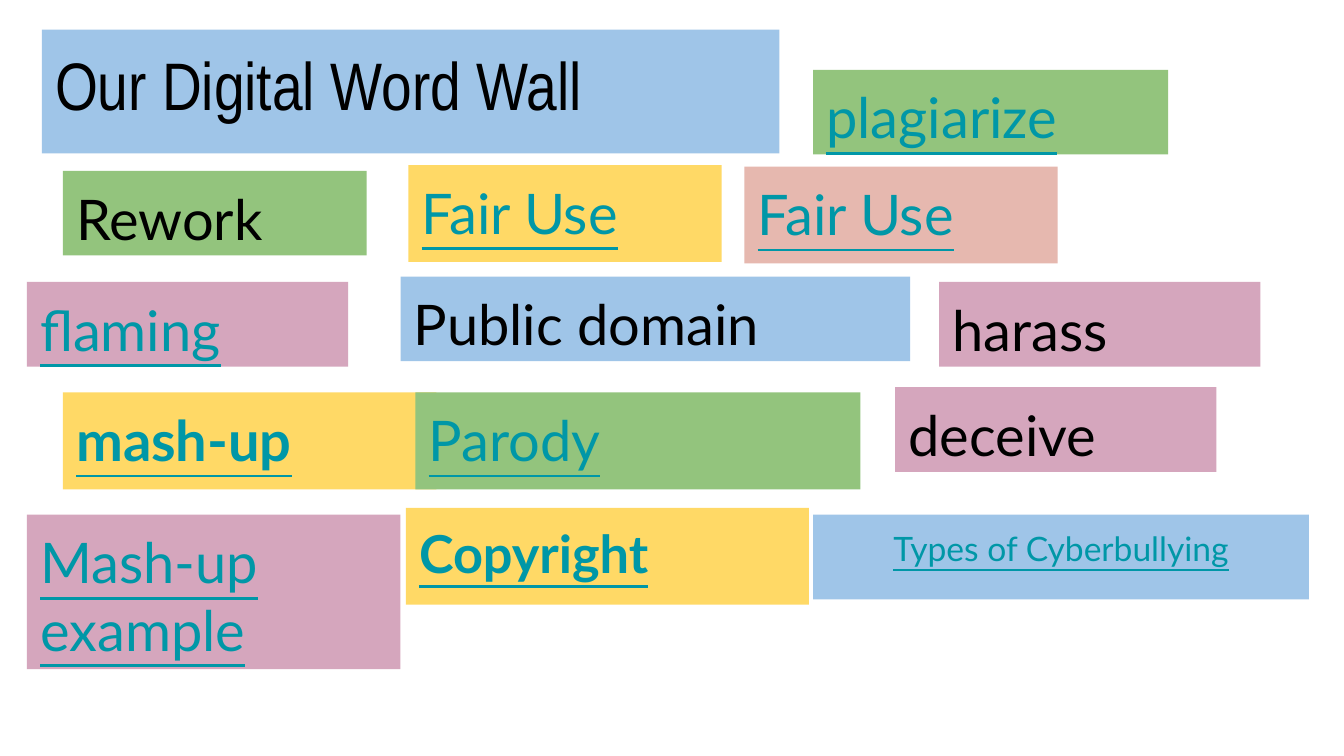
from dataclasses import dataclass

from pptx import Presentation
from pptx.dml.color import RGBColor
from pptx.enum.shapes import MSO_SHAPE
from pptx.enum.text import MSO_ANCHOR, MSO_AUTO_SIZE, PP_ALIGN
from pptx.shapes.autoshape import Shape
from pptx.slide import Slide
from pptx.util import Cm, Pt

RECTANGLE = MSO_SHAPE.RECTANGLE
TOP = MSO_ANCHOR.TOP
NO_AUTOFIT = MSO_AUTO_SIZE.NONE
LEFT = PP_ALIGN.LEFT
CENTER = PP_ALIGN.CENTER
TITLE_ONLY = 5

BLUE = "9FC5E8"
GREEN = "93C47D"
YELLOW = "FFD966"
PINK = "D5A6BD"
SALMON = "E6B8AF"
BLACK = "000000"
TEAL = "0097A7"

LOW = 1.6
MEDIUM = 1.83
TALL = 2.92
INSET = 0.25


@dataclass
class Card:
    text: str
    fill: str
    left: float
    top: float
    width: float
    height: float = LOW
    linked: bool = False
    bold: bool = False
    size: int = 30
    font: str = "Lato"
    align: PP_ALIGN = LEFT


HEADING = Card("Our Digital Word Wall", BLUE, 0.79, 0.56, 13.94, 2.34,
               size=36, font="Arial Narrow")

WORDS = [
    Card("plagiarize", GREEN, 15.37, 1.32, 6.71, linked=True),
    Card("Rework", GREEN, 1.19, 3.23, 5.74),
    Card("Fair Use", YELLOW, 7.72, 3.12, 5.92, MEDIUM, linked=True),
    Card("Fair Use", SALMON, 14.07, 3.15, 5.92, MEDIUM, linked=True),
    Card("flaming", PINK, 0.51, 5.33, 6.07, linked=True),
    Card("Public domain", BLUE, 7.57, 5.23, 9.63),
    Card("harass", PINK, 17.75, 5.33, 6.07),
    Card("mash-up", YELLOW, 1.19, 7.42, 7.06, MEDIUM, linked=True, bold=True),
    Card("Parody", GREEN, 7.85, 7.42, 8.41, MEDIUM, linked=True),
    Card("deceive", PINK, 16.92, 7.32, 6.07),
    Card("Mash-up example", PINK, 0.51, 9.73, 7.06, TALL, linked=True),
    Card("Copyright", YELLOW, 7.67, 9.6, 7.62, MEDIUM, linked=True, bold=True,
         size=28),
    Card("Types of Cyberbullying", BLUE, 15.37, 9.73, 9.37, linked=True,
         size=18, align=CENTER),
]


def color(value: str) -> RGBColor:
    return RGBColor.from_string(value)


def format_card(box: Shape, card: Card) -> None:
    box.left, box.top = Cm(card.left), Cm(card.top)
    box.width, box.height = Cm(card.width), Cm(card.height)
    box.fill.solid()
    box.fill.fore_color.rgb = color(card.fill)
    box.line.fill.background()

    frame = box.text_frame
    frame.text = card.text
    frame.word_wrap = True
    frame.auto_size = NO_AUTOFIT
    frame.vertical_anchor = TOP
    frame.margin_left = frame.margin_right = Cm(INSET)
    frame.margin_top = frame.margin_bottom = Cm(INSET)

    para = frame.paragraphs[0]
    para.alignment = card.align
    span = para.runs[0]
    span.font.name = card.font
    span.font.size = Pt(card.size)
    span.font.bold = card.bold
    span.font.underline = card.linked
    span.font.color.rgb = color(TEAL if card.linked else BLACK)


def add_word(page: Slide, card: Card) -> None:
    box = page.shapes.add_shape(RECTANGLE, Cm(card.left), Cm(card.top),
                                Cm(card.width), Cm(card.height))
    box.shadow.inherit = False
    format_card(box, card)


def main() -> None:
    deck = Presentation()
    deck.slide_width, deck.slide_height = Cm(25.4), Cm(14.29)
    page = deck.slides.add_slide(deck.slide_layouts[TITLE_ONLY])
    format_card(page.shapes.title, HEADING)
    for card in WORDS:
        add_word(page, card)
    deck.save("out.pptx")


if __name__ == "__main__":
    main()
